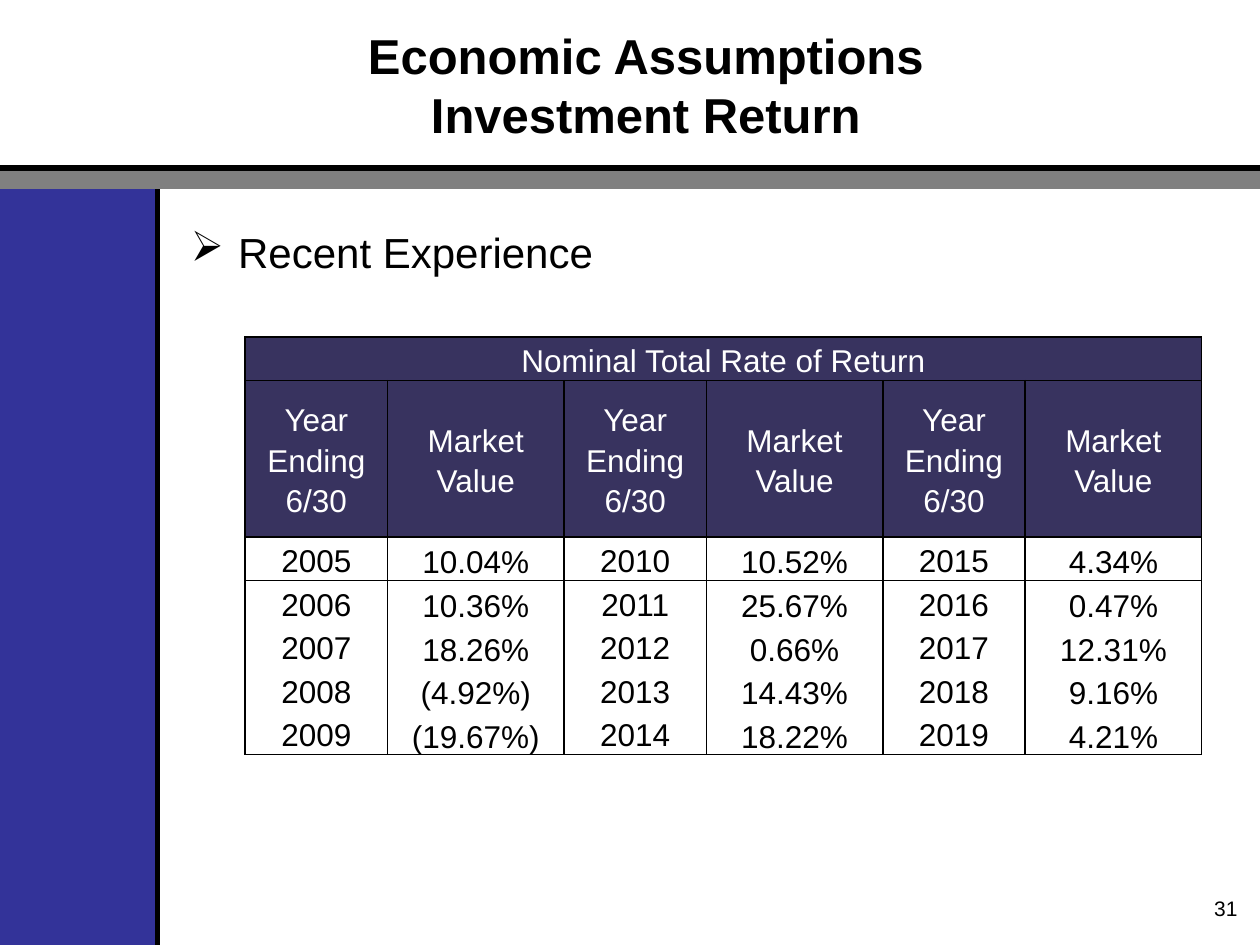
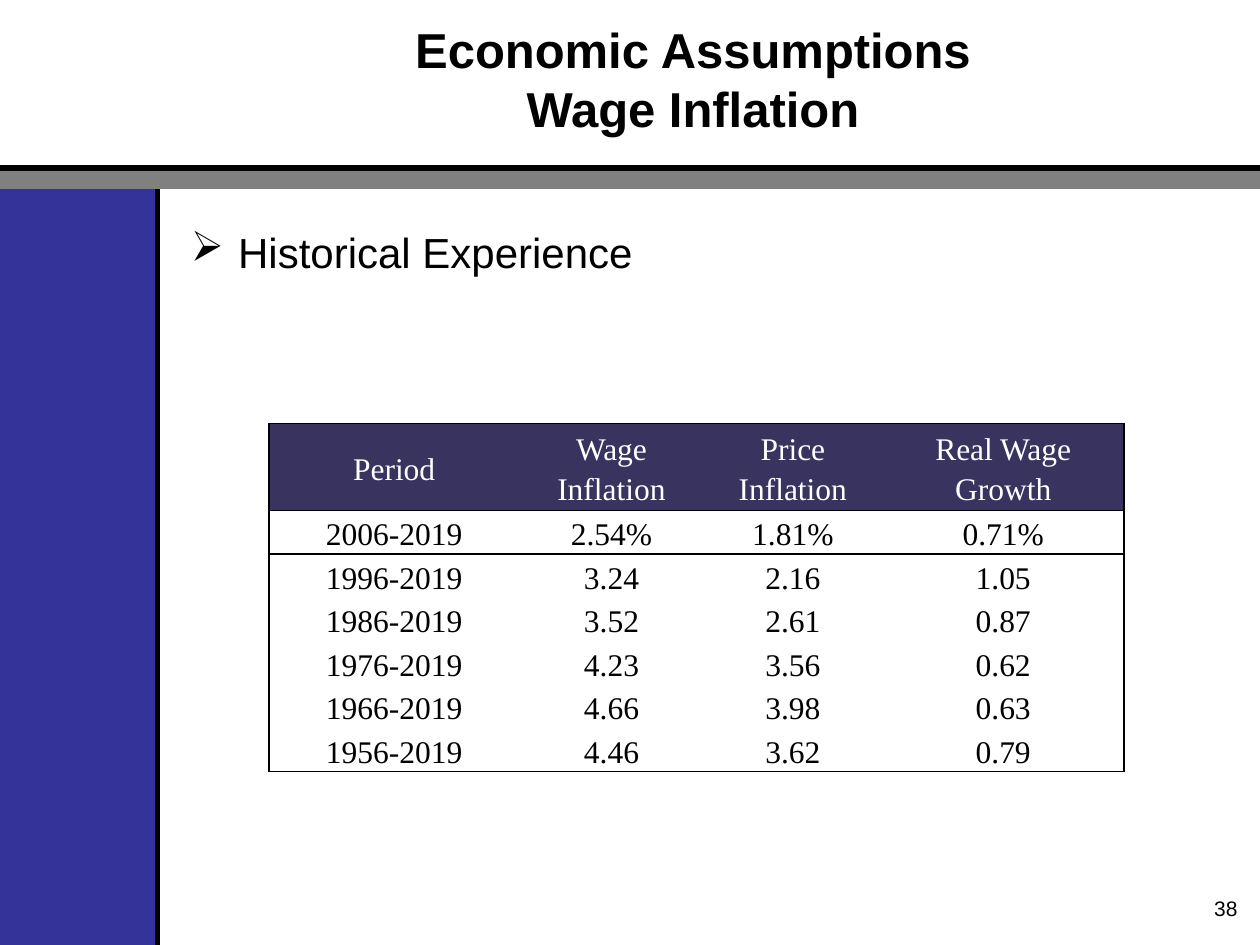
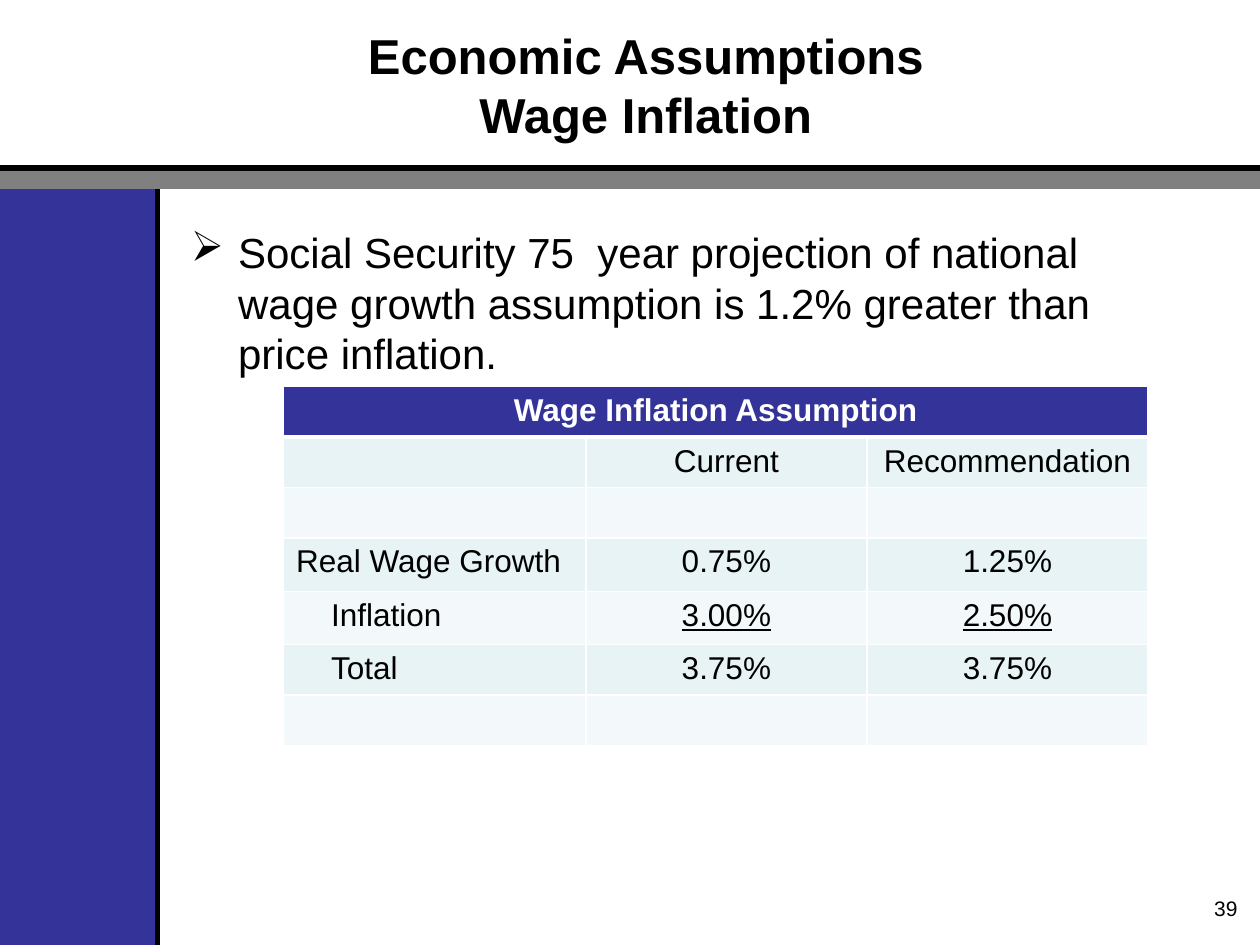
from lxml import etree
from pptx import Presentation
from pptx import util as u
from pptx.dml import color
from pptx.enum import shapes, text
from pptx.oxml import ns

BLACK, WHITE, BLUE, GREY, NAVY = "000000", "FFFFFF", "333399", "808080", "38335F"
PALE_BANDS = ("F3F9FA", "E7F3F4")
WIDTH, HEIGHT = 720, 540
BAND_TOP, BAND_LEFT = 96, 90
PLAIN_TABLE_STYLE = "{2D5ABB26-0587-4C30-8999-92F81FD0307C}"
CENTER, RIGHT = text.PP_ALIGN.CENTER, text.PP_ALIGN.RIGHT
MIDDLE, BOTTOM = text.MSO_ANCHOR.MIDDLE, text.MSO_ANCHOR.BOTTOM


def paint(target, hex_color):
    target.rgb = color.RGBColor.from_string(hex_color)


def fill_with(target, hex_color):
    target.fill.solid()
    paint(target.fill.fore_color, hex_color)


def assign(target, values):
    for name, value in values.items():
        setattr(target, name, value)


def points(*values):
    return [u.Pt(value) for value in values]


def write(para, words, hex_color=BLACK, size=18, name="Arial", **font):
    para.text = words
    targets = [span.font for span in para.runs] or [para.font]
    for target in targets:
        assign(target, {"size": u.Pt(size), "name": name, **font})
        paint(target.color, hex_color)


def add_band(slide, left, top, width, height, hex_color):
    band = slide.shapes.add_shape(shapes.MSO_SHAPE.RECTANGLE, *points(left, top, width, height))
    band.shadow.inherit = False
    fill_with(band, hex_color)
    band.line.fill.background()


def add_rule(slide, *ends):
    rule = slide.shapes.add_connector(shapes.MSO_CONNECTOR.STRAIGHT, *points(*ends))
    rule.line.width = u.Pt(3)
    paint(rule.line.color, BLACK)
    etree.SubElement(rule._element.spPr, ns.qn("a:effectLst"))


def add_text(slide, place, words, align=None, anchor=text.MSO_ANCHOR.TOP, bullet=None, **font):
    box = slide.shapes.add_textbox(*points(*place))
    assign(box.text_frame, {"word_wrap": True, "vertical_anchor": anchor})
    para = box.text_frame.paragraphs[0]
    para.alignment = align
    if bullet:
        props = para._p.get_or_add_pPr()
        indent = u.Pt(27)
        props.set("marL", str(indent))
        props.set("indent", str(-indent))
        etree.SubElement(props, ns.qn("a:buChar")).set("char", bullet)
    write(para, words, **font)


def add_page(deck, topic, point, number, title_place=(90, 0, 558, 96)):
    slide = deck.slides.add_slide(deck.slide_layouts[6])
    add_band(slide, 0, BAND_TOP, BAND_LEFT, HEIGHT - BAND_TOP, BLUE)
    add_rule(slide, BAND_LEFT, BAND_TOP, BAND_LEFT, HEIGHT)
    add_band(slide, 0, BAND_TOP, WIDTH, 12, GREY)
    add_rule(slide, 0, BAND_TOP, WIDTH, BAND_TOP)
    add_text(slide, title_place, f"Economic Assumptions\v{topic}", CENTER, MIDDLE, size=28, bold=True)
    add_text(slide, (102, 126, 582, 42), point, bullet="➢", size=24)
    add_text(slide, (684, 508.3, 30.2, 31.7), str(number), RIGHT, size=12)
    return slide


def add_grid(slide, left, top, widths, heights, rows):
    frame = slide.shapes.add_table(
        len(heights), len(widths), *points(left, top, sum(widths), sum(heights)))
    table = frame.table
    table._tbl.tblPr.find(ns.qn("a:tableStyleId")).text = PLAIN_TABLE_STYLE
    for column, width in zip(table.columns, widths):
        column.width = u.Pt(width)
    for row, height in zip(table.rows, heights):
        row.height = u.Pt(height)
    if len(rows[0]) == 1:
        table.cell(0, 0).merge(table.cell(0, len(widths) - 1))
    return table


def add_borders(cell, edges, hex_color):
    props = cell._tc.get_or_add_tcPr()
    for side in "LRTB":
        if side in edges:
            line = etree.SubElement(props, ns.qn(f"a:ln{side}"), w=str(u.Pt(edges[side])))
            solid = etree.SubElement(line, ns.qn("a:solidFill"))
            etree.SubElement(solid, ns.qn("a:srgbClr"), val=hex_color)


def fill_cell(cell, words, edges, border=BLACK, fill=None, inset=None, anchor=None,
              align=CENTER, spacing=None, **font):
    add_borders(cell, edges, border)
    if fill:
        fill_with(cell, fill)
    if inset is not None:
        side = u.Pt(inset)
        assign(cell, {"margin_left": side, "margin_right": side, "margin_top": 0, "margin_bottom": 0})
    cell.vertical_anchor = anchor
    para = cell.text_frame.paragraphs[0]
    assign(para, {"alignment": align, "line_spacing": spacing})
    write(para, words, **font)


def box_edges(row, column, first_row, last_row, last_column):
    tests = {"L": column == 0, "R": column == last_column,
             "T": row == first_row, "B": row == last_row}
    return {side: 1 for side, drawn in tests.items() if drawn}


def add_return_table(slide):
    years = [("2005", "10.04%", "2010", "10.52%", "2015", "4.34%"),
             ("2006", "10.36%", "2011", "25.67%", "2016", "0.47%"),
             ("2007", "18.26%", "2012", "0.66%", "2017", "12.31%"),
             ("2008", "(4.92%)", "2013", "14.43%", "2018", "9.16%"),
             ("2009", "(19.67%)", "2014", "18.22%", "2019", "4.21%")]
    rows = [("Nominal Total Rate of Return",), ("Year Ending 6/30", "Market Value") * 3, *years]
    table = add_grid(slide, 140.1, 192.6, [81.4, 100.8] * 3, [24.3, 89.5] + [24.3] * 5, rows)
    for r, row in enumerate(rows):
        for c, words in enumerate(row):
            header = r < 2
            edges = dict.fromkeys("LRTB", 1) if header else {
                "L": 1, "R": 1, **box_edges(r, c, 2, 6, 5)}
            fill_cell(table.cell(r, c), words, edges, inset=4.3, spacing=1.15,
                      fill=NAVY if header else None,
                      hex_color=WHITE if header else BLACK,
                      anchor=BOTTOM if c % 2 and not header else MIDDLE)


def add_history_table(slide):
    rows = [("Period", "Wage Inflation", "Price Inflation", "Real Wage Growth"),
            ("2006-2019", "2.54%", "1.81%", "0.71%"),
            ("1996-2019", "3.24", "2.16", "1.05"),
            ("1986-2019", "3.52", "2.61", "0.87"),
            ("1976-2019", "4.23", "3.56", "0.62"),
            ("1966-2019", "4.66", "3.98", "0.63"),
            ("1956-2019", "4.46", "3.62", "0.79")]
    table = add_grid(slide, 153.6, 242, [143.3, 105.1, 102.2, 138.2], [45.7] + [22.8] * 6, rows)
    for r, row in enumerate(rows):
        for c, words in enumerate(row):
            first, last = (0, 0) if r == 0 else (1, 6)
            fill_cell(table.cell(r, c), words, box_edges(r, c, first, last, 3),
                      inset=5, spacing=1.15, anchor=MIDDLE, name="Times New Roman",
                      fill=NAVY if r == 0 else None,
                      hex_color=WHITE if r == 0 else BLACK)


def add_assumption_table(slide):
    rows = [("Wage Inflation Assumption",),
            ("", "Current", "Recommendation"),
            ("", "", ""),
            ("Real Wage Growth", "0.75%", "1.25%"),
            ("Inflation", "3.00%", "2.50%"),
            ("Total", "3.75%", "3.75%"),
            ("", "", "")]
    heights = [28.6, 28.6, 28.6, 30.4, 30.4, 28.6, 28.6]
    table = add_grid(slide, 162, 221, [172.8, 160.6, 160.6], heights, rows)
    for r, row in enumerate(rows):
        for c, words in enumerate(row):
            title = r == 0
            edges = {"L": 1, "R": 1, "T": 3 if r == 1 else 1, "B": 3 if title else 1}
            cell = table.cell(r, c)
            fill_cell(cell, words, edges, border=WHITE,
                      fill=BLUE if title else PALE_BANDS[r % 2],
                      align=CENTER if title or c else None,
                      hex_color=WHITE if title else BLACK, bold=title,
                      underline=r == 4 and c > 0)
            if words in ("Inflation", "Total"):
                cell.margin_left = u.Pt(27.2)


def main():
    deck = Presentation()
    assign(deck, {"slide_width": u.Pt(WIDTH), "slide_height": u.Pt(HEIGHT)})
    add_return_table(add_page(deck, "Investment Return", "Recent Experience", 31))
    add_history_table(add_page(
        deck, "Wage Inflation", "Historical Experience", 38, (156, 0, 480, 90)))
    add_assumption_table(add_page(
        deck, "Wage Inflation",
        "Social Security 75  year projection of national wage growth assumption "
        "is 1.2% greater than price inflation.", 39))
    deck.save("out.pptx")


if __name__ == "__main__":
    main()
